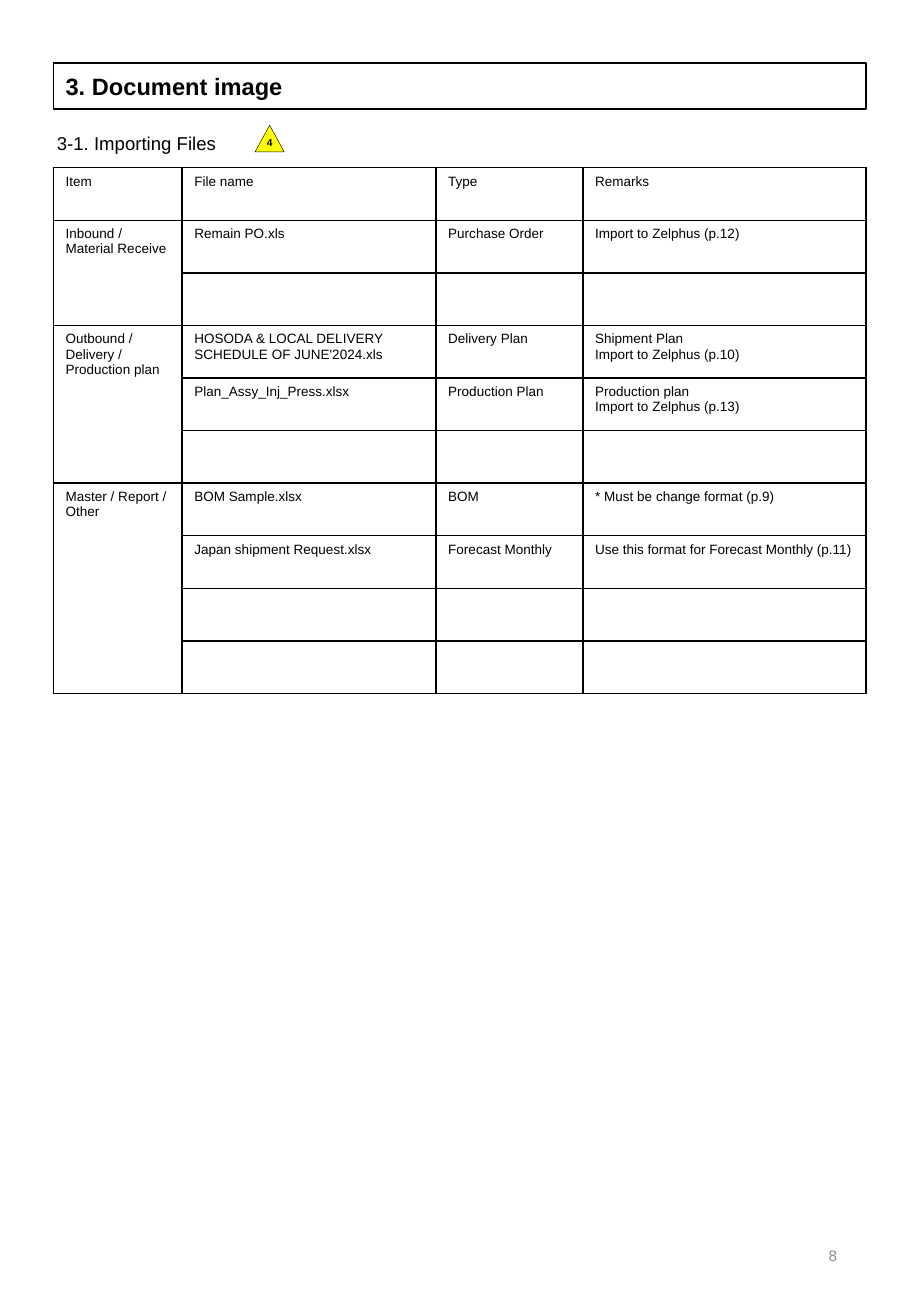
from dataclasses import dataclass

from lxml import etree
from pptx import Presentation
from pptx import util as u
from pptx.dml.color import RGBColor
from pptx.enum import shapes, text
from pptx.oxml.ns import qn

PX = 9144
BLACK = "000000"
COLS = [106, 209, 121, 233]
ROW = 433 * PX // 10


@dataclass
class Box:
    words: str
    left: int
    top: int
    width: int
    height: int
    size: int
    color: str = BLACK
    bold: bool = False
    align: text.PP_ALIGN = text.PP_ALIGN.LEFT
    anchor: text.MSO_ANCHOR = text.MSO_ANCHOR.MIDDLE


@dataclass
class Group:
    item: str
    rows: list[tuple[str, str, str]]


BLANK = ("", "", "")
TITLE = Box("3. Document image", 44, 52, 669, 38, 14, bold=True)
PAGE = Box("8", 530, 1004, 169, 58, 9, "8C8C8C", align=text.PP_ALIGN.RIGHT)
HEAD = Box("3-1. Importing Files", 37, 104, 459, 29, 11,
           anchor=text.MSO_ANCHOR.TOP)
MARK = Box("4", 210, 103, 24, 22, 6, bold=True, align=text.PP_ALIGN.CENTER)
GROUPS = [
    Group("Item", [("File name", "Type", "Remarks")]),
    Group("Inbound / Material Receive", [
        ("Remain PO.xls", "Purchase Order", "Import to Zelphus (p.12)"),
        BLANK,
    ]),
    Group("Outbound / Delivery / Production plan", [
        ("HOSODA & LOCAL DELIVERY SCHEDULE OF JUNE'2024.xls",
         "Delivery Plan", "Shipment Plan\nImport to Zelphus (p.10)"),
        ("Plan_Assy_Inj_Press.xlsx", "Production Plan",
         "Production plan\nImport to Zelphus (p.13)"),
        BLANK,
    ]),
    Group("Master / Report / Other", [
        ("BOM Sample.xlsx", "BOM", "* Must be change format (p.9)"),
        ("Japan shipment Request.xlsx", "Forecast Monthly",
         "Use this format for Forecast Monthly (p.11)"),
        BLANK,
        BLANK,
    ]),
]


def paint(color: str) -> RGBColor:
    return RGBColor.from_string(color)


def area(box: Box) -> list[int]:
    return [n * PX for n in (box.left, box.top, box.width, box.height)]


def style(frame, size: int, color: str = BLACK, bold: bool = False) -> None:
    for para in frame.paragraphs:
        for run in para.runs:
            run.font.name = "Arial"
            run.font.size = u.Pt(size)
            run.font.bold = bold
            run.font.color.rgb = paint(color)


def write(shape, box: Box) -> None:
    frame = shape.text_frame
    frame.text = box.words
    frame.word_wrap = True
    frame.auto_size = text.MSO_AUTO_SIZE.NONE
    frame.vertical_anchor = box.anchor
    frame.paragraphs[0].alignment = box.align
    style(frame, box.size, box.color, box.bold)


def edge(shape, width: float) -> None:
    shape.line.color.rgb = paint(BLACK)
    shape.line.width = u.Pt(width)


def frame_cell(cell) -> None:
    props = cell._tc.get_or_add_tcPr()
    for side in ("lnL", "lnR", "lnT", "lnB"):
        line = etree.SubElement(props, qn(f"a:{side}"), w=str(u.Pt(1)))
        fill = etree.SubElement(line, qn("a:solidFill"))
        etree.SubElement(fill, qn("a:srgbClr"), val=BLACK)
    cell.fill.background()


def add_title(slide, box: Box) -> None:
    title = slide.shapes.title
    title.left, title.top, title.width, title.height = area(box)
    write(title, box)
    edge(title, 1)


def add_label(slide, box: Box) -> None:
    write(slide.shapes.add_textbox(*area(box)), box)


def add_mark(slide, box: Box) -> None:
    mark = slide.shapes.add_shape(
        shapes.MSO_SHAPE.ISOSCELES_TRIANGLE, *area(box))
    mark.shadow.inherit = False
    mark.fill.solid()
    mark.fill.fore_color.rgb = paint("FFFF00")
    edge(mark, 0.25)
    write(mark, box)
    frame = mark.text_frame
    frame.word_wrap = False
    frame.margin_top = 0
    frame.margin_bottom = 5 * PX


def add_grid(slide, groups: list[Group]) -> None:
    count = sum(len(group.rows) for group in groups)
    table = slide.shapes.add_table(
        count, len(COLS), 44 * PX, 138 * PX, sum(COLS) * PX, ROW * count).table
    table.first_row = table.horz_banding = False
    for col, width in zip(table.columns, COLS):
        col.width = width * PX
    for row in table.rows:
        row.height = ROW
    for cell in table.iter_cells():
        frame_cell(cell)
    top = 0
    for group in groups:
        last = top + len(group.rows) - 1
        if last > top:
            table.cell(top, 0).merge(table.cell(last, 0))
        table.cell(top, 0).text_frame.text = group.item
        for r, row in enumerate(group.rows, top):
            for c, words in enumerate(row, 1):
                table.cell(r, c).text_frame.text = words
        top = last + 1
    for cell in table.iter_cells():
        style(cell.text_frame, 8)


def main() -> None:
    deck = Presentation()
    deck.slide_width = 750 * PX
    deck.slide_height = 1083 * PX
    slide = deck.slides.add_slide(deck.slide_layouts[5])
    add_title(slide, TITLE)
    add_label(slide, PAGE)
    add_label(slide, HEAD)
    add_grid(slide, GROUPS)
    add_mark(slide, MARK)
    deck.save("out.pptx")


if __name__ == "__main__":
    main()
